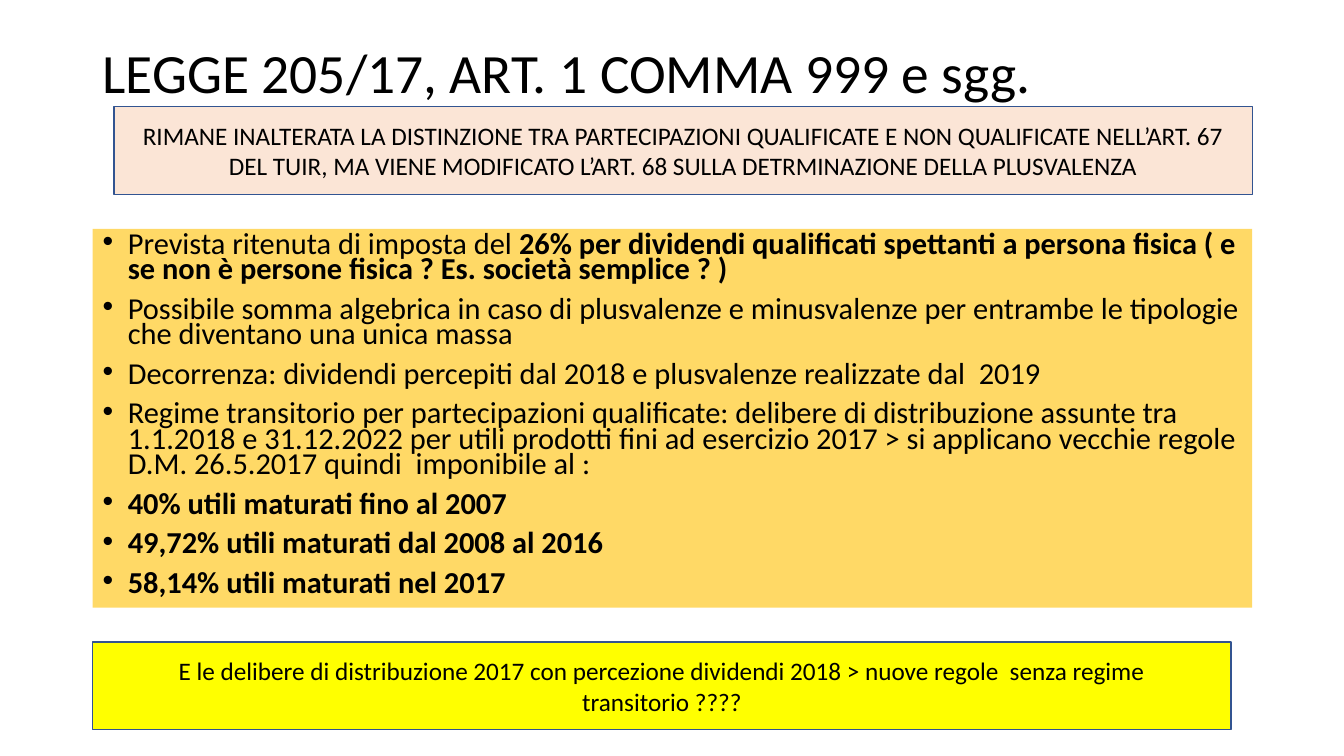
from dataclasses import dataclass

from lxml import etree
from pptx import Presentation
from pptx.dml.color import RGBColor
from pptx.enum.shapes import MSO_SHAPE
from pptx.enum.text import MSO_ANCHOR, PP_ALIGN
from pptx.oxml.ns import qn
from pptx.util import Inches, Pt

RECT = MSO_SHAPE.RECTANGLE
TOP, MIDDLE = MSO_ANCHOR.TOP, MSO_ANCHOR.MIDDLE
LEFT, CENTER = PP_ALIGN.LEFT, PP_ALIGN.CENTER


@dataclass(frozen=True)
class Theme:
    font: str = "Calibri"
    text: str = "000000"
    border: str = "325491"
    peach: str = "FBE5D6"
    gold: str = "FFD966"
    yellow: str = "FFFF00"
    title_size: float = 39.6
    body_size: float = 21.7
    note_size: float = 18


THEME = Theme()

TITLE = "LEGGE 205/17, ART. 1 COMMA 999 e sgg."
PREMISE = (
    "RIMANE INALTERATA LA DISTINZIONE TRA PARTECIPAZIONI QUALIFICATE E NON "
    "QUALIFICATE NELL’ART. 67 DEL TUIR, MA VIENE MODIFICATO L’ART. 68 SULLA "
    "DETRMINAZIONE DELLA PLUSVALENZA"
)
QUESTION = (
    "E le delibere di distribuzione 2017 con percezione dividendi 2018 > "
    "nuove regole  senza regime transitorio ????"
)
RULES = [
    ("Prevista ritenuta di imposta del ",
     "26% per dividendi qualificati spettanti a persona fisica "
     "( e se non è persone fisica ? Es. società semplice ? )"),
    ("Possibile somma algebrica in caso di plusvalenze e minusvalenze per "
     "entrambe le tipologie che diventano una unica massa", ""),
    ("Decorrenza: dividendi percepiti dal 2018 e plusvalenze realizzate dal  2019", ""),
    ("Regime transitorio per partecipazioni qualificate: delibere di "
     "distribuzione assunte tra 1.1.2018 e 31.12.2022 per utili prodotti fini "
     "ad esercizio 2017 > si applicano vecchie regole D.M. 26.5.2017 quindi  "
     "imponibile al :", ""),
    ("", "40% utili maturati fino al 2007"),
    ("", "49,72% utili maturati dal 2008 al 2016"),
    ("", "58,14% utili maturati nel 2017"),
]


def style_run(r, size, bold=False):
    r.font.name = THEME.font
    r.font.size = Pt(size)
    r.font.bold = bold
    r.font.color.rgb = RGBColor.from_string(THEME.text)


def add_title(s, text, left, top, width, height):
    sp = s.shapes.add_textbox(Inches(left), Inches(top), Inches(width), Inches(height))
    tf = sp.text_frame
    tf.word_wrap = True
    tf.vertical_anchor = MIDDLE
    tf.text = text
    p = tf.paragraphs[0]
    p.line_spacing = 0.9
    style_run(p.runs[0], THEME.title_size)


def add_panel(s, fill, left, top, width, height, border=None):
    sp = s.shapes.add_shape(RECT, Inches(left), Inches(top), Inches(width), Inches(height))
    sp.shadow.inherit = False
    sp.fill.solid()
    sp.fill.fore_color.rgb = RGBColor.from_string(fill)
    if border:
        sp.line.color.rgb = RGBColor.from_string(border)
        sp.line.width = Pt(1)
    else:
        sp.line.fill.background()
    sp.text_frame.word_wrap = True
    return sp.text_frame


def add_note(s, text, fill, left, top):
    tf = add_panel(s, fill, left, top, 11.29, 0.87, THEME.border)
    tf.vertical_anchor = MIDDLE
    tf.text = text
    p = tf.paragraphs[0]
    p.alignment = CENTER
    style_run(p.runs[0], THEME.note_size)


def set_bullet(p):
    pPr = p._p.get_or_add_pPr()
    pPr.set("marL", str(Inches(0.25)))
    pPr.set("indent", str(Inches(-0.25)))
    etree.SubElement(pPr, qn("a:buFont")).set("typeface", "Arial")
    etree.SubElement(pPr, qn("a:buChar")).set("char", "•")


def add_bullets(s, items, fill, left, top, width, height):
    tf = add_panel(s, fill, left, top, width, height)
    tf.vertical_anchor = TOP
    for i, (plain, strong) in enumerate(items):
        p = tf.add_paragraph() if i else tf.paragraphs[0]
        p.alignment = LEFT
        p.line_spacing = 0.7
        p.space_before = Pt(10)
        set_bullet(p)
        for text, bold in ((plain, False), (strong, True)):
            if text:
                r = p.add_run()
                r.text = text
                style_run(r, THEME.body_size, bold)


def main():
    prs = Presentation()
    prs.slide_width = Inches(13.33)
    prs.slide_height = Inches(7.5)
    s = prs.slides.add_slide(prs.slide_layouts[6])
    add_title(s, TITLE, 0.92, 0.4, 11.5, 0.7)
    add_bullets(s, RULES, THEME.gold, 0.92, 2.27, 11.5, 3.76)
    add_note(s, PREMISE, THEME.peach, 1.13, 1.06)
    add_note(s, QUESTION, THEME.yellow, 0.92, 6.37)
    prs.save("out.pptx")


if __name__ == "__main__":
    main()
